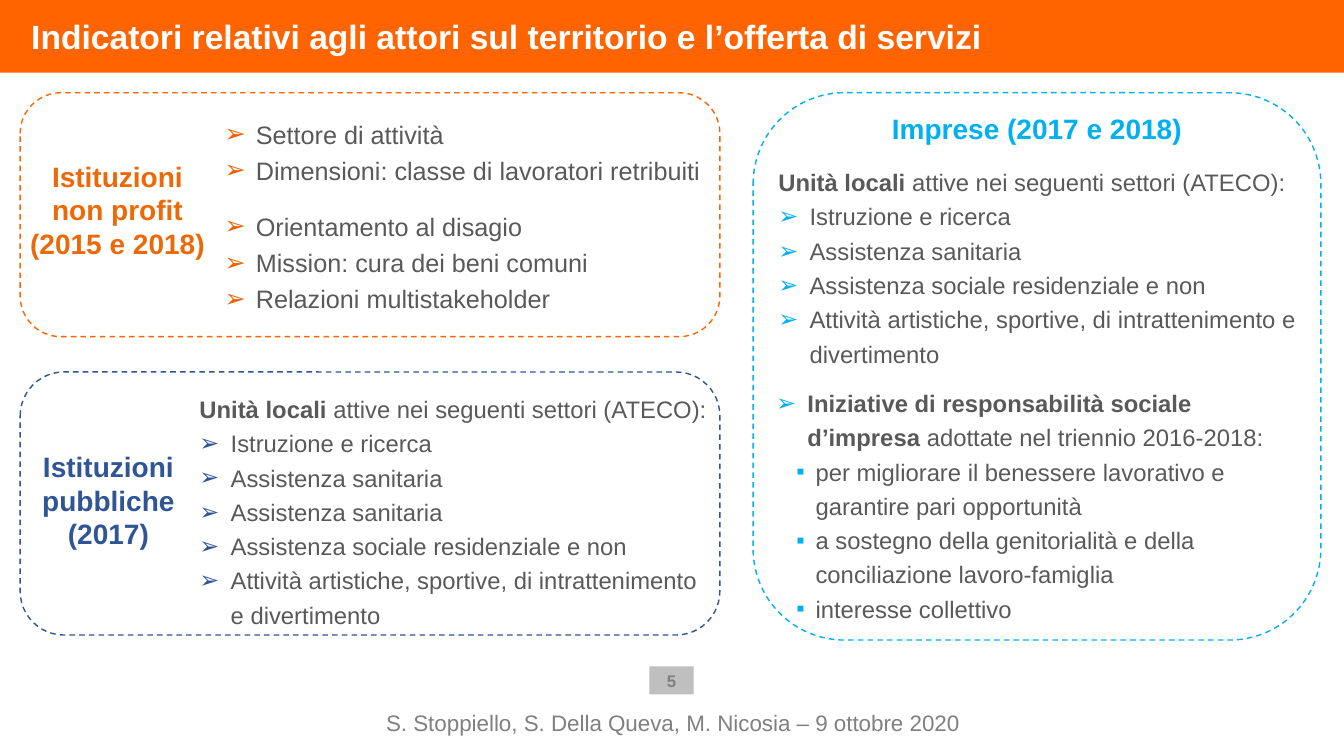
from lxml import etree
from pptx import Presentation
from pptx.dml.color import RGBColor
from pptx.enum.dml import MSO_LINE
from pptx.enum.shapes import MSO_SHAPE
from pptx.enum.text import MSO_ANCHOR, MSO_AUTO_SIZE, PP_ALIGN
from pptx.oxml.ns import qn
from pptx.util import Inches, Pt

DASH = MSO_LINE.DASH
RECT, ROUNDED = MSO_SHAPE.RECTANGLE, MSO_SHAPE.ROUNDED_RECTANGLE
TOP, MIDDLE, BOTTOM = MSO_ANCHOR.TOP, MSO_ANCHOR.MIDDLE, MSO_ANCHOR.BOTTOM
LEFT, CENTER = PP_ALIGN.LEFT, PP_ALIGN.CENTER
NO_FIT = MSO_AUTO_SIZE.NONE

ORANGE = RGBColor(0xFF, 0x64, 0x00)
ORANGE_LABEL = RGBColor(0xEC, 0x69, 0x07)
ORANGE_BULLET = RGBColor(0xEE, 0x60, 0x00)
NAVY = RGBColor(0x2F, 0x55, 0x97)
CYAN = RGBColor(0x00, 0xB0, 0xF0)
TEXT_GREY = RGBColor(0x59, 0x59, 0x59)
FOOTER_GREY = RGBColor(0x80, 0x80, 0x80)
PAGE_GREY = RGBColor(0xBF, 0xBF, 0xBF)
WHITE = RGBColor(0xFF, 0xFF, 0xFF)

FONT = "Arial"
SLIDE_W, SLIDE_H = Inches(13.33), Inches(7.5)
# The slide is a grid of 100 columns by 100 rows
COL, ROW = SLIDE_W / 100, SLIDE_H / 100

# Bullet levels: character, left margin and hanging indent in inches
ARROW = ("➢", 0.31, 0.31)
SQUARE = ("▪", 0.39, 0.19)

SECTORS_INTRO = [("Unità locali ", True),
                 ("attive nei seguenti settori (ATECO):", False)]
EDUCATION = "Istruzione e ricerca"
HEALTH = "Assistenza sanitaria"
SOCIAL = "Assistenza sociale residenziale e non"
LEISURE = "Attività artistiche, sportive, di intrattenimento e divertimento"


def on_grid(box):
    x, y, w, h = box
    return int(x * COL), int(y * ROW), int(w * COL), int(h * ROW)


def inside(panel, part):
    """Shift a part's grid box by the corner of its panel."""
    return panel[0] + part[0], panel[1] + part[1], part[2], part[3]


def add_run(paragraph, text, size, color, bold=False):
    run = paragraph.add_run()
    run.text = text
    run.font.name, run.font.size = FONT, Pt(size)
    run.font.bold = bold
    run.font.color.rgb = color


def add_bullet(paragraph, level, color):
    char, margin, hanging = level
    props = paragraph._p.get_or_add_pPr()
    props.set("marL", str(Inches(margin)))
    props.set("indent", str(-Inches(hanging)))
    tint = etree.SubElement(props, qn("a:buClr"))
    etree.SubElement(tint, qn("a:srgbClr")).set("val", str(color))
    etree.SubElement(props, qn("a:buFont")).set("typeface", FONT)
    etree.SubElement(props, qn("a:buChar")).set("char", char)


def add_text_frame(slide, box, anchor=TOP):
    frame = slide.shapes.add_textbox(*on_grid(box)).text_frame
    frame.word_wrap = True
    frame.vertical_anchor = anchor
    return frame


def next_paragraph(frame, index):
    return frame.add_paragraph() if index else frame.paragraphs[0]


def add_heading(slide, box, lines, color):
    frame = add_text_frame(slide, box)
    for index, line in enumerate(lines):
        paragraph = next_paragraph(frame, index)
        paragraph.alignment = CENTER
        add_run(paragraph, line, 20, color, True)


def add_list(slide, box, entries, size, bullet_color):
    """Each entry holds its bullet level, its runs and the space before."""
    frame = add_text_frame(slide, box)
    for index, (level, runs, gap) in enumerate(entries):
        paragraph = next_paragraph(frame, index)
        paragraph.line_spacing = 1.2
        if gap:
            paragraph.space_before = Pt(gap)
        if level:
            add_bullet(paragraph, level, bullet_color)
        for text, bold in runs:
            add_run(paragraph, text, size, TEXT_GREY, bold)


def items(level, *texts):
    return [(level, [(text, False)], 0) for text in texts]


def add_panel(slide, box, color):
    outline = slide.shapes.add_shape(ROUNDED, *on_grid(box))
    outline.shadow.inherit = False
    outline.fill.background()
    outline.line.color.rgb = color
    outline.line.width = Pt(1)
    outline.line.dash_style = DASH


def add_title(slide, box):
    title = slide.shapes.title
    title.left, title.top, title.width, title.height = on_grid(box)
    title.fill.solid()
    title.fill.fore_color.rgb = ORANGE
    frame = title.text_frame
    frame.auto_size = NO_FIT
    frame.word_wrap = True
    frame.vertical_anchor = TOP
    frame.margin_left = frame.margin_right = Inches(0.31)
    frame.margin_top = frame.margin_bottom = Inches(0.16)
    heading = frame.paragraphs[0]
    heading.alignment = LEFT
    add_run(heading, "Indicatori relativi agli attori sul territorio e "
            "l’offerta di servizi", 24, WHITE, True)


def add_non_profit(slide, box):
    add_panel(slide, box, ORANGE)
    add_heading(slide, inside(box, (0, 8.13, 14.48, 14.8)),
                ["Istituzioni non profit", "(2015 e 2018)"], ORANGE_LABEL)
    entries = items(ARROW, "Settore di attività",
                    "Dimensioni: classe di lavoratori retribuiti")
    entries.append((ARROW, [("Orientamento al disagio", False)], 14))
    entries += items(ARROW, "Mission: cura dei beni comuni",
                     "Relazioni multistakeholder")
    add_list(slide, inside(box, (14.48, 2, 37.58, 28.8)),
             entries, 18, ORANGE_BULLET)


def add_public_bodies(slide, box):
    add_panel(slide, box, NAVY)
    add_heading(slide, inside(box, (0.38, 9.6, 12.38, 14.8)),
                ["Istituzioni pubbliche", "(2017)"], NAVY)
    entries = [(None, SECTORS_INTRO, 0)]
    entries += items(ARROW, EDUCATION, HEALTH, HEALTH, SOCIAL, LEISURE)
    add_list(slide, inside(box, (12.6, 1.6, 39.61, 33.33)),
             entries, 17, NAVY)


def add_companies(slide, box):
    add_panel(slide, box, CYAN)
    add_heading(slide, inside(box, (5.33, 1.87, 31.58, 5.87)),
                ["Imprese (2017 e 2018)"], CYAN)
    sectors = [(None, SECTORS_INTRO, 0)]
    sectors += items(ARROW, EDUCATION, HEALTH, SOCIAL, LEISURE)
    add_list(slide, inside(box, (1.13, 8.53, 41.11, 28.8)),
             sectors, 17, CYAN)
    initiatives = [(ARROW, [
        ("Iniziative di responsabilità sociale d’impresa ", True),
        ("adottate nel triennio 2016-2018:", False)], 0)]
    initiatives += items(
        SQUARE,
        "per migliorare il benessere lavorativo e garantire pari opportunità",
        "a sostegno della genitorialità e della conciliazione lavoro-famiglia",
        "interesse collettivo")
    add_list(slide, inside(box, (0.98, 37.73, 41.26, 33.33)),
             initiatives, 17, CYAN)


def add_footer(slide, box):
    # Page number
    page = slide.shapes.add_shape(RECT, *on_grid(inside(box, (21, 0, 3.3, 3.73))))
    page.shadow.inherit = False
    page.fill.solid()
    page.fill.fore_color.rgb = PAGE_GREY
    page.line.fill.background()
    page.text_frame.vertical_anchor = MIDDLE
    number = page.text_frame.paragraphs[0]
    number.alignment = CENTER
    add_run(number, "5", 12, FOOTER_GREY, True)
    # Authors and date
    frame = add_text_frame(slide, inside(box, (0, 4.4, 45.54, 4.8)), BOTTOM)
    frame.margin_bottom = 0
    authors = frame.paragraphs[0]
    authors.alignment = CENTER
    add_run(authors, "S. Stoppiello, S. Della Queva, M. Nicosia – 9 ottobre 2020",
            16, FOOTER_GREY)


def main():
    deck = Presentation()
    deck.slide_width, deck.slide_height = SLIDE_W, SLIDE_H
    slide = deck.slides.add_slide(deck.slide_layouts.get_by_name("Title Only"))
    add_title(slide, (0, 0, 100, 9.6))
    add_non_profit(slide, (1.5, 12.27, 52.06, 32.27))
    add_public_bodies(slide, (1.5, 49.2, 52.06, 34.8))
    add_companies(slide, (56.04, 12.27, 42.24, 72.4))
    add_footer(slide, (27.31, 88.13, 45.54, 9.2))
    deck.save("out.pptx")


if __name__ == "__main__":
    main()
